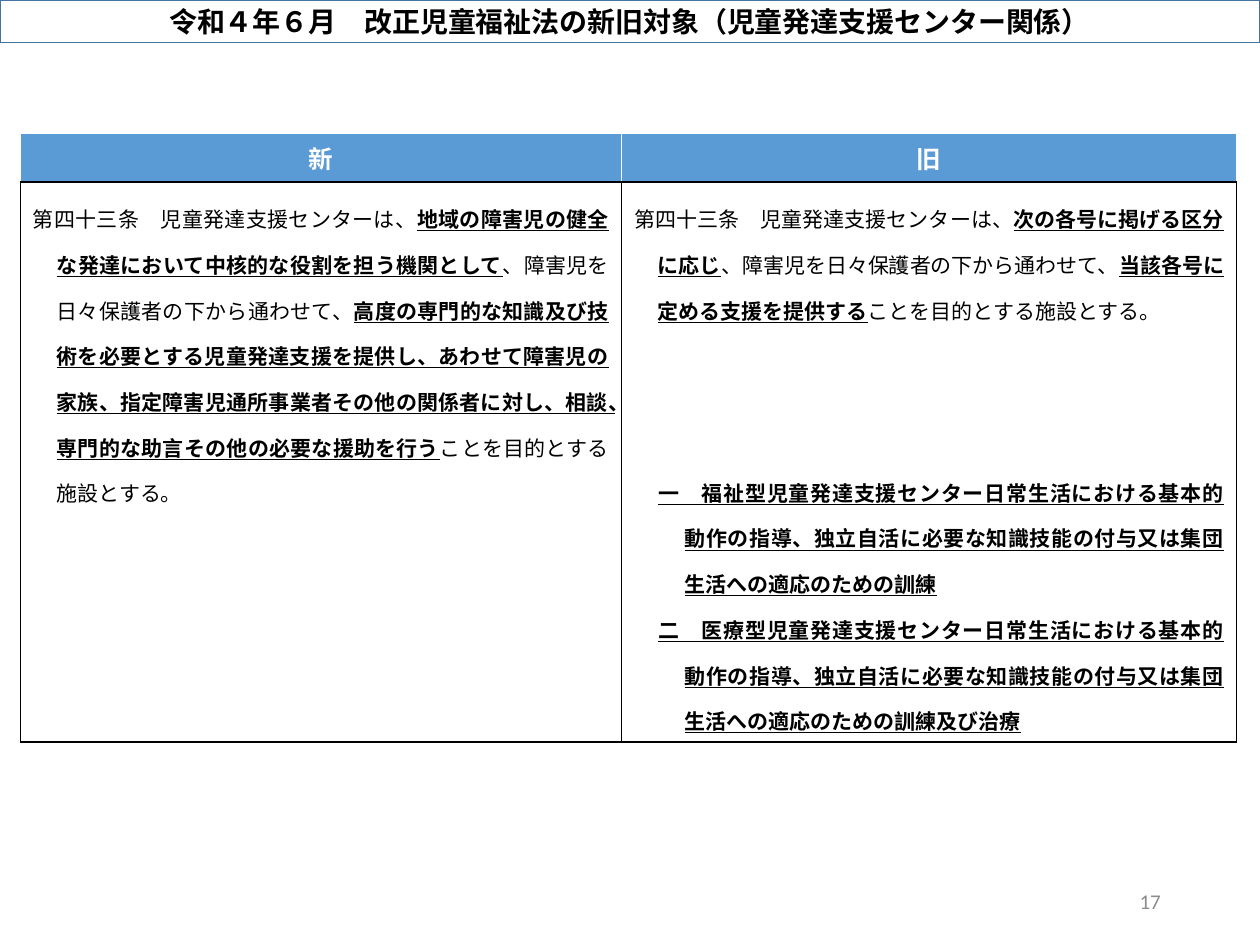
from lxml import etree
from pptx import Presentation
from pptx.dml.color import RGBColor
from pptx.enum.text import MSO_ANCHOR, PP_ALIGN
from pptx.oxml.ns import qn
from pptx.util import Cm, Pt

MID = MSO_ANCHOR.MIDDLE
CENTER, RIGHT, JUST = PP_ALIGN.CENTER, PP_ALIGN.RIGHT, PP_ALIGN.JUSTIFY
BLACK = RGBColor(0, 0, 0)
WHITE = RGBColor(255, 255, 255)
BLUE = RGBColor(0x5B, 0x9B, 0xD5)
EDGE = RGBColor(0x43, 0x73, 0x9E)
GRAY = RGBColor(0x8C, 0x8C, 0x8C)
FONT = "Noto Sans CJK JP"

HEADS = ["新", "旧"]
START = "第四十三条　児童発達支援センターは、"
DAILY = "、障害児を日々保護者の下から通わせて、"
GOAL = "ことを目的とする施設とする。"
SKILL = "日常生活における基本的動作の指導、独立自活に必要な知識技能の付与又は集団生活への適応のための訓練"
ROOT = (0.48, -0.48, 0)
NEW = [
    (ROOT, [START, "地域の障害児の健全な発達において中核的な役割を担う機関として", DAILY,
            "高度の専門的な知識及び技術を必要とする児童発達支援を提供し、あわせて障害児の家族、"
            "指定障害児通所事業者その他の関係者に対し、相談、専門的な助言その他の必要な援助を行う", GOAL]),
]
OLD = [
    (ROOT, [START, "次の各号に掲げる区分に応じ", DAILY, "当該各号に定める支援を提供する", GOAL]),
    ((1.02, -0.53, 78), ["", "一　福祉型児童発達支援センター" + SKILL]),
    ((1.02, -0.53, 0), ["", "二　医療型児童発達支援センター" + SKILL + "及び治療"]),
]


class Deck:
    """Holds the text style and the current slide, and adds each kind of element."""

    def __init__(self, prs, font):
        self.font = font
        self.slide = prs.slides.add_slide(prs.slide_layouts[5])

    def style(self, run, size, color=BLACK, bold=False, line=False, font=None):
        face = font or self.font
        run.font.name, run.font.size = face, Pt(size)
        run.font.bold, run.font.underline = bold, line
        run.font.color.rgb = color
        etree.SubElement(run.font._element, qn("a:ea"), typeface=face)

    def put(self, frame, text, align, size, **look):
        frame.text = text
        para = frame.paragraphs[0]
        para.alignment = align
        self.style(para.runs[0], size, **look)

    def title(self, text, box):
        shape = self.slide.shapes.title
        shape.left, shape.top, shape.width, shape.height = map(Cm, box)
        shape.line.color.rgb, shape.line.width = EDGE, Pt(1)
        shape.text_frame.vertical_anchor = MID
        self.put(shape.text_frame, text, CENTER, 16, bold=True)

    def label(self, text, box):
        frame = self.slide.shapes.add_textbox(*map(Cm, box)).text_frame
        frame.word_wrap, frame.vertical_anchor = True, MID
        self.put(frame, text, RIGHT, 12, color=GRAY, font="Calibri")

    def border(self, cell, colors):
        props = cell._tc.get_or_add_tcPr()
        for spot, (side, color) in enumerate(zip("LRTB", colors)):
            line = etree.Element(qn("a:ln" + side), w=str(Pt(1)))
            fill = etree.SubElement(line, qn("a:solidFill"))
            etree.SubElement(fill, qn("a:srgbClr"), val=str(color))
            props.insert(spot, line)

    def head(self, cell, text):
        cell.fill.solid()
        cell.fill.fore_color.rgb = BLUE
        self.border(cell, [WHITE] * 3 + [BLACK])
        self.put(cell.text_frame, text, CENTER, 14, color=WHITE, bold=True)

    def body(self, cell, items):
        cell.fill.background()
        self.border(cell, [BLACK] * 4)
        frame = cell.text_frame
        for row, ((left, first, gap), parts) in enumerate(items):
            para = frame.add_paragraph() if row else frame.paragraphs[0]
            para.alignment, para.line_spacing = JUST, 1.5
            para.space_before = Pt(gap)
            props = para._p.get_or_add_pPr()
            props.set("marL", str(Cm(left)))
            props.set("indent", str(Cm(first)))
            for spot, part in enumerate(parts):
                if part:
                    run = para.add_run()
                    run.text = part
                    mark = spot % 2 == 1
                    self.style(run, 12, bold=mark, line=mark)

    def table(self, heads, bodies, box, cols, rows):
        shape = self.slide.shapes.add_table(2, len(heads), *map(Cm, box))
        grid = shape.table
        grid.horz_banding = False
        for row, high in zip(grid.rows, rows):
            row.height = Cm(high)
        for col, wide in zip(grid.columns, cols):
            col.width = Cm(wide)
        shape.height = Cm(box[3])
        for col, (text, items) in enumerate(zip(heads, bodies)):
            self.head(grid.cell(0, col), text)
            self.body(grid.cell(1, col), items)


def main():
    prs = Presentation()
    prs.slide_width, prs.slide_height = Cm(25.4), Cm(19.05)
    deck = Deck(prs, FONT)
    deck.table(HEADS, [NEW, OLD], (0.41, 2.69, 24.52, 10.24), (12.12, 12.4), (0.71, 7.9))
    deck.title("令和４年６月　改正児童福祉法の新旧対象（児童発達支援センター関係）", (0, 0, 25.4, 0.86))
    deck.label("17", (17.93, 17.65, 5.72, 1.02))
    prs.save("out.pptx")


if __name__ == "__main__":
    main()
